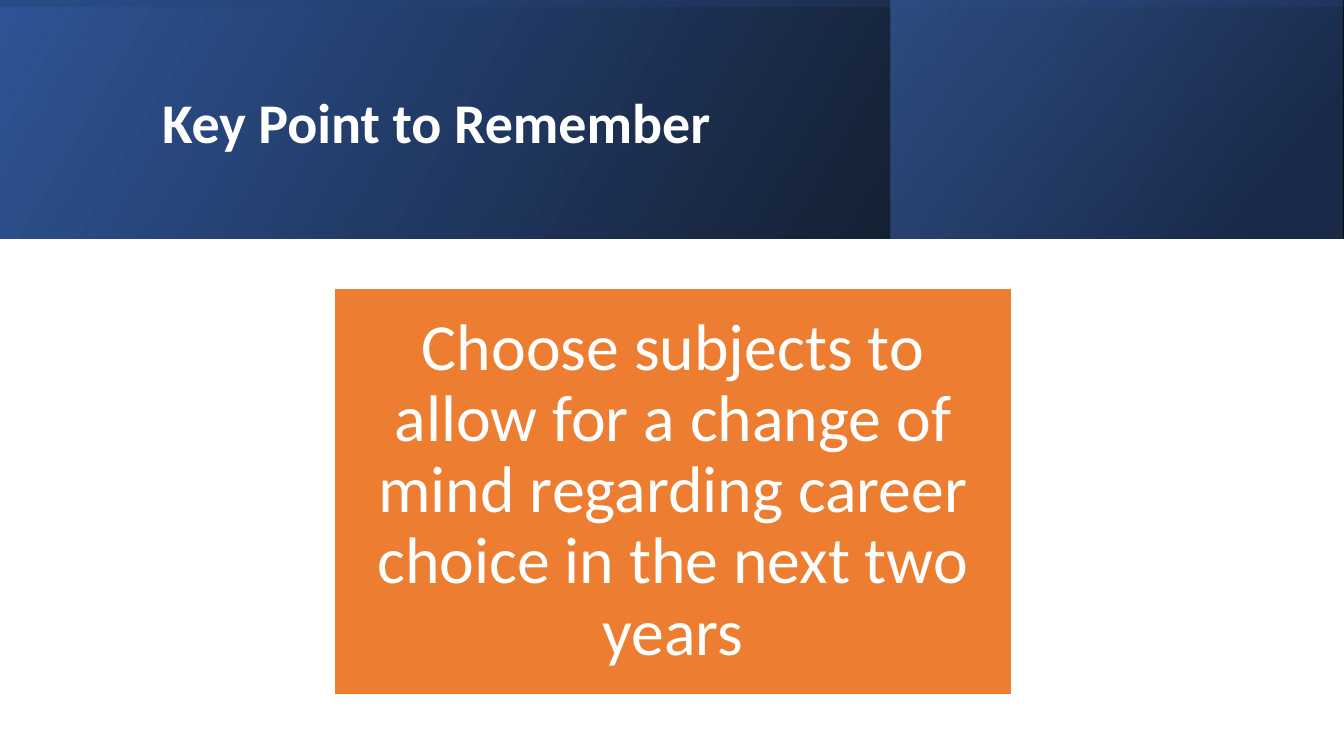
from dataclasses import dataclass

from lxml import etree
from pptx import Presentation, util as u
from pptx.dml.color import RGBColor
from pptx.enum import shapes, text
from pptx.oxml import ns

WIDE, HIGH, BAND = 960, 540, 170.6


@dataclass
class Stop:
    pos: int
    hue: str
    alpha: int


@dataclass
class Panel:
    left: float
    top: float
    wide: float
    high: float
    angle: int
    stops: list[Stop]
    turn: int = 0


@dataclass
class Label:
    words: str
    size: int
    bold: bool
    align: text.PP_ALIGN
    inset: tuple[float, float]


PANELS = [
    Panel(0, 0, WIDE, BAND, 330, [Stop(0, "000000", 96), Stop(100, "2F5597", 100)]),
    Panel(636.5, 0, 322.6, BAND, 320, [Stop(19, "203864", 68), Stop(100, "4472C4", 48)]),
    Panel((WIDE - BAND) / 2, (BAND - WIDE) / 2, BAND, WIDE, 350,
          [Stop(23, "2F5597", 16), Stop(99, "000000", 45)], 270),
]
TITLE = Label("Key Point to Remember", 40, True, text.PP_ALIGN.LEFT, (7.2, 3.6))
ADVICE = Label("Choose subjects to allow for a change of mind regarding "
               "career choice in the next two years",
               47, False, text.PP_ALIGN.CENTER, (14.4, 14.4))


def color(code: str) -> RGBColor:
    return RGBColor.from_string(code)


def style(target, values: dict) -> None:
    for name, value in values.items():
        setattr(target, name, value)


def box(slide, left: float, top: float, wide: float, high: float):
    """Add a plain rectangle without a shadow."""
    shape = slide.shapes.add_shape(
        shapes.MSO_SHAPE.RECTANGLE, u.Pt(left), u.Pt(top), u.Pt(wide), u.Pt(high))
    shape.shadow.inherit = False
    return shape


def blend(shape, stops: list[Stop], angle: int) -> None:
    """Give the shape a linear gradient with see-through stops."""
    shape.fill.gradient()
    grad = shape._element.spPr.find(ns.qn("a:gradFill"))
    for child in list(grad):
        grad.remove(child)
    row = etree.SubElement(grad, ns.qn("a:gsLst"))
    for stop in stops:
        mark = etree.SubElement(row, ns.qn("a:gs"), pos=str(stop.pos * 1000))
        hue = etree.SubElement(mark, ns.qn("a:srgbClr"), val=stop.hue)
        etree.SubElement(hue, ns.qn("a:alpha"), val=str(stop.alpha * 1000))
    etree.SubElement(grad, ns.qn("a:lin"), ang=str(angle * 60000), scaled="0")


def draw(slide, panel: Panel) -> None:
    shape = box(slide, panel.left, panel.top, panel.wide, panel.high)
    shape.line.fill.background()
    shape.rotation = panel.turn
    shape._element.spPr.xfrm.set("flipH", "1")
    blend(shape, panel.stops, panel.angle)


def write(shape, label: Label) -> None:
    side, edge = map(u.Pt, label.inset)
    frame = shape.text_frame
    style(frame, {"word_wrap": True, "vertical_anchor": text.MSO_ANCHOR.MIDDLE,
                  "margin_left": side, "margin_right": side,
                  "margin_top": edge, "margin_bottom": edge})
    para = frame.paragraphs[0]
    style(para, {"alignment": label.align, "line_spacing": 0.9})
    run = para.add_run()
    run.text = label.words
    style(run.font, {"name": "Calibri", "size": u.Pt(label.size), "bold": label.bold})
    run.font.color.rgb = color("FFFFFF")


def main() -> None:
    deck = Presentation()
    style(deck, {"slide_width": u.Pt(WIDE), "slide_height": u.Pt(HIGH)})
    slide = deck.slides.add_slide(deck.slide_layouts[6])
    for panel in PANELS:
        draw(slide, panel)
    title = slide.shapes.add_textbox(u.Pt(108.7), u.Pt(27.4), u.Pt(765.4), u.Pt(123.8))
    write(title, TITLE)
    card = box(slide, 239, 206, 483.8, 290.2)
    card.fill.solid()
    card.fill.fore_color.rgb = color("ED7D31")
    card.line.color.rgb = color("FFFFFF")
    card.line.width = u.Pt(1)
    write(card, ADVICE)
    deck.save("out.pptx")


if __name__ == "__main__":
    main()
